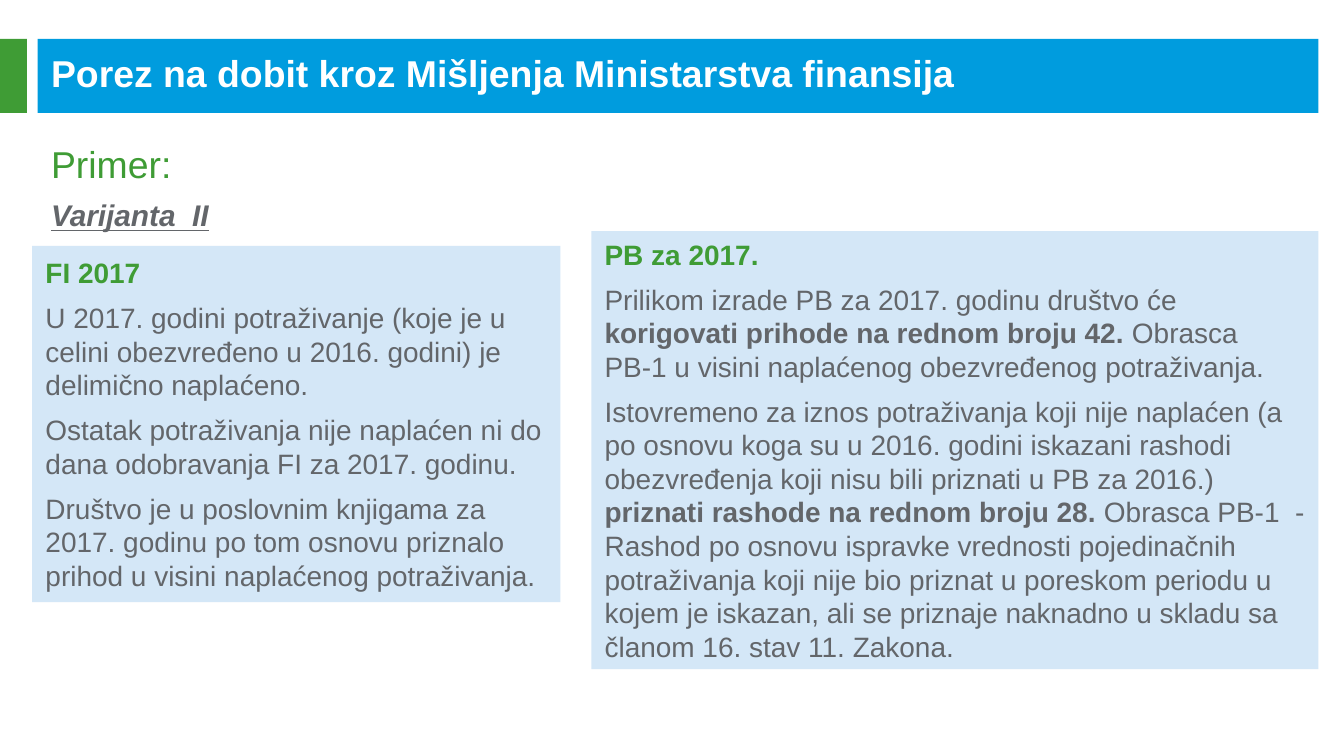
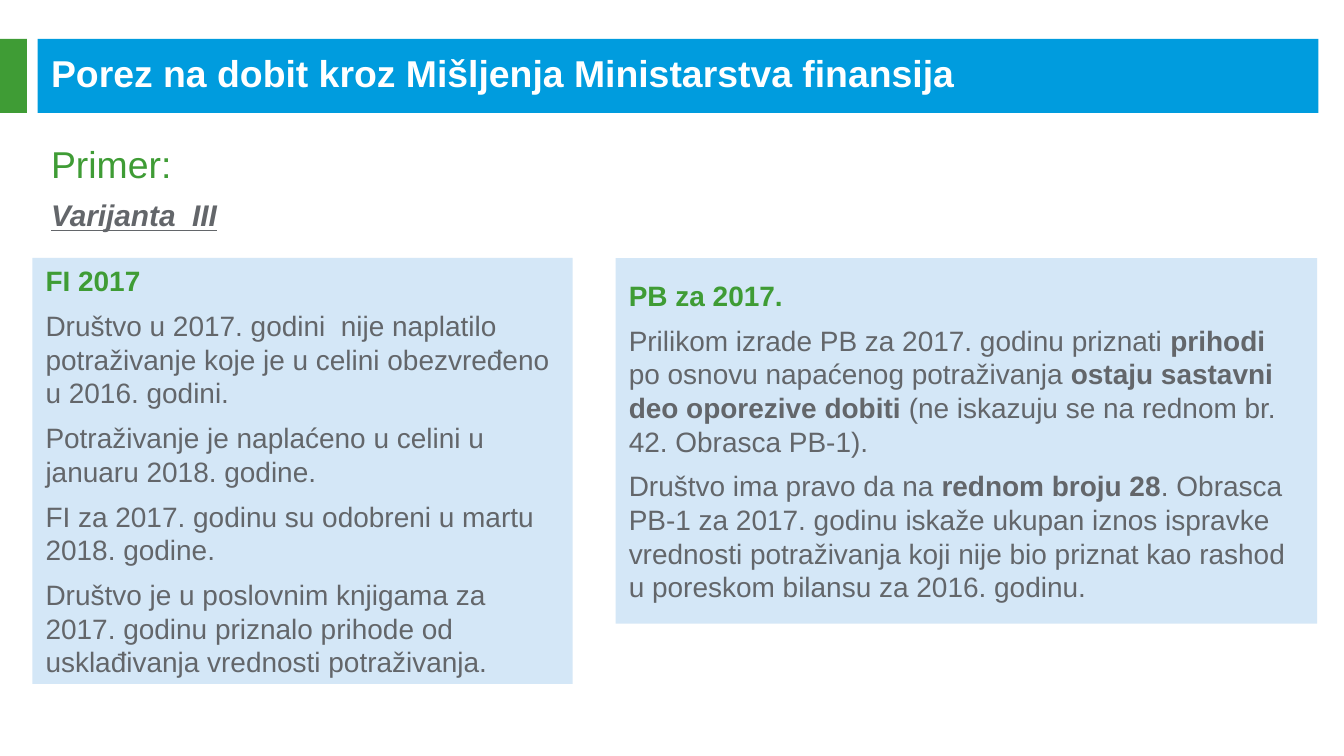
"""Build two slides that compare accounting and tax treatment by variant."""
from dataclasses import dataclass

from pptx import Presentation
from pptx.dml.color import RGBColor
from pptx.enum.shapes import MSO_SHAPE as Shape
from pptx.enum.text import MSO_ANCHOR as Anchor, MSO_AUTO_SIZE as AutoSize, PP_ALIGN as Align
from pptx.oxml.ns import qn
from pptx.util import Inches, Pt


@dataclass(frozen=True)
class Theme:
    font: str = "Arial"
    blue: RGBColor = RGBColor(0x00, 0x9C, 0xDE)
    green: RGBColor = RGBColor(0x3F, 0x9C, 0x35)
    pale: RGBColor = RGBColor(0xD4, 0xE7, 0xF7)
    gray: RGBColor = RGBColor(0x63, 0x66, 0x6A)
    white: RGBColor = RGBColor(0xFF, 0xFF, 0xFF)
    title: int = 20
    variant: int = 16
    panel: int = 15
    gap: int = 6


@dataclass(frozen=True)
class Box:
    left: float
    top: float
    width: float
    height: float

    def lengths(self) -> tuple:
        return tuple(Inches(v) for v in (self.left, self.top, self.width, self.height))


@dataclass(frozen=True)
class Bold:
    text: str


@dataclass(frozen=True)
class Panel:
    box: Box
    heading: str
    paragraphs: tuple


@dataclass(frozen=True)
class Variant:
    name: str
    panels: tuple


THEME = Theme()
TITLE = "Porez na dobit kroz Mišljenja Ministarstva finansija"
TITLE_BOX = Box(0.28, 0.39, 9.36, 0.3)
INTRO_BOX = Box(0.28, 1, 9.53, 0.53)
BANDS = (
    (Box(0.28, 0.29, 9.53, 0.55), THEME.blue),
    (Box(0, 0.29, 0.2, 0.55), THEME.green),
)

VARIANTS = (
    Variant("Varijanta  II", (
        Panel(Box(0.24, 1.83, 3.93, 2.65), "FI 2017", (
            ("U 2017. godini potraživanje (koje je u celini obezvređeno u 2016. godini) "
             "je delimično naplaćeno.",),
            ("Ostatak potraživanja nije naplaćen ni do dana odobravanja FI za 2017. godinu.",),
            ("Društvo je u poslovnim knjigama za 2017. godinu po tom osnovu priznalo "
             "prihod u visini naplaćenog potraživanja.",),
        )),
        Panel(Box(4.4, 1.72, 5.41, 3.26), "PB za 2017.", (
            ("Prilikom izrade PB za 2017. godinu društvo će ",
             Bold("korigovati prihode na rednom broju 42. "),
             "Obrasca PB-1 u visini naplaćenog obezvređenog potraživanja."),
            ("Istovremeno za iznos potraživanja koji nije naplaćen (a po osnovu koga su "
             "u 2016. godini iskazani rashodi obezvređenja koji nisu bili priznati u PB "
             "za 2016.) ",
             Bold("priznati rashode na rednom broju 28. "),
             "Obrasca PB-1  - Rashod po osnovu ispravke vrednosti pojedinačnih "
             "potraživanja koji nije bio priznat u poreskom periodu u kojem je iskazan, "
             "ali se priznaje naknadno u skladu sa članom 16. stav 11. Zakona."),
        )),
    )),
    Variant("Varijanta  III", (
        Panel(Box(0.24, 1.92, 4.02, 3.17), "FI 2017", (
            ("Društvo u 2017. godini  nije naplatilo potraživanje koje je u celini "
             "obezvređeno u 2016. godini.",),
            ("Potraživanje je naplaćeno u celini u januaru 2018. godine.",),
            ("FI za 2017. godinu su odobreni u martu 2018. godine.",),
            ("Društvo je u poslovnim knjigama za 2017. godinu priznalo prihode od "
             "usklađivanja vrednosti potraživanja.",),
        )),
        Panel(Box(4.58, 1.92, 5.22, 2.72), "PB za 2017.", (
            ("Prilikom izrade PB za 2017. godinu priznati ",
             Bold("prihodi "),
             "po osnovu napaćenog potraživanja ",
             Bold("ostaju sastavni deo oporezive dobiti "),
             "(ne iskazuju se na rednom br. 42. Obrasca PB-1)."),
            ("Društvo ima pravo da na ",
             Bold("rednom broju 28"),
             ". Obrasca PB-1 za 2017. godinu iskaže ukupan iznos ispravke vrednosti "
             "potraživanja koji nije bio priznat kao rashod u poreskom bilansu za "
             "2016. godinu."),
        )),
    )),
)


def add_run(p, text: str, size: int, color: RGBColor, bold: bool = False):
    r = p.add_run()
    r.text = text
    r.font.name = THEME.font
    r.font.size = Pt(size)
    r.font.bold = bold
    r.font.color.rgb = color
    return r


def add_rect(s, box: Box, color: RGBColor):
    sp = s.shapes.add_shape(Shape.RECTANGLE, *box.lengths())
    sp.shadow.inherit = False
    sp.fill.solid()
    sp.fill.fore_color.rgb = color
    sp.line.fill.background()
    return sp


def prepare(sp, box: Box, anchor: Anchor):
    sp.left, sp.top, sp.width, sp.height = box.lengths()
    tf = sp.text_frame
    tf.word_wrap = True
    tf.auto_size = AutoSize.NONE
    tf.vertical_anchor = anchor
    return tf


def next_paragraph(tf, first: bool, before: int = 0, after: int = 0):
    p = tf.paragraphs[0] if first else tf.add_paragraph()
    p.alignment = Align.LEFT
    p.space_before = Pt(before)
    p.space_after = Pt(after)
    return p


def remove_bullet(p) -> None:
    props = p._p.get_or_add_pPr()
    props.set("marL", "0")
    props.set("indent", "0")
    props.append(props.makeelement(qn("a:buNone"), {}))


def add_header(s, variant: str) -> None:
    title, body = s.shapes.title, s.placeholders[1]
    for box, color in BANDS:
        title.element.addprevious(add_rect(s, box, color).element)

    tf = prepare(title, TITLE_BOX, Anchor.MIDDLE)
    add_run(next_paragraph(tf, True), TITLE, THEME.title, THEME.white, bold=True)

    tf = prepare(body, INTRO_BOX, Anchor.TOP)
    p = next_paragraph(tf, True)
    remove_bullet(p)
    add_run(p, "Primer:", THEME.title, THEME.green)
    p = next_paragraph(tf, False, before=THEME.gap)
    remove_bullet(p)
    r = add_run(p, variant, THEME.variant, THEME.gray, bold=True)
    r.font.italic = True
    r.font.underline = True


def add_panel(s, panel: Panel) -> None:
    tf = prepare(add_rect(s, panel.box, THEME.pale), panel.box, Anchor.MIDDLE)
    p = next_paragraph(tf, True, after=THEME.gap)
    add_run(p, panel.heading, THEME.panel, THEME.green, bold=True)
    for parts in panel.paragraphs:
        p = next_paragraph(tf, False, after=THEME.gap)
        for part in parts:
            bold = isinstance(part, Bold)
            add_run(p, part.text if bold else part, THEME.panel, THEME.gray, bold)


def main() -> None:
    prs = Presentation()
    prs.slide_width = Inches(10)
    prs.slide_height = prs.slide_width * 9 // 16
    for variant in VARIANTS:
        s = prs.slides.add_slide(prs.slide_layouts[1])
        add_header(s, variant.name)
        for panel in variant.panels:
            add_panel(s, panel)
    prs.save("out.pptx")


if __name__ == "__main__":
    main()
